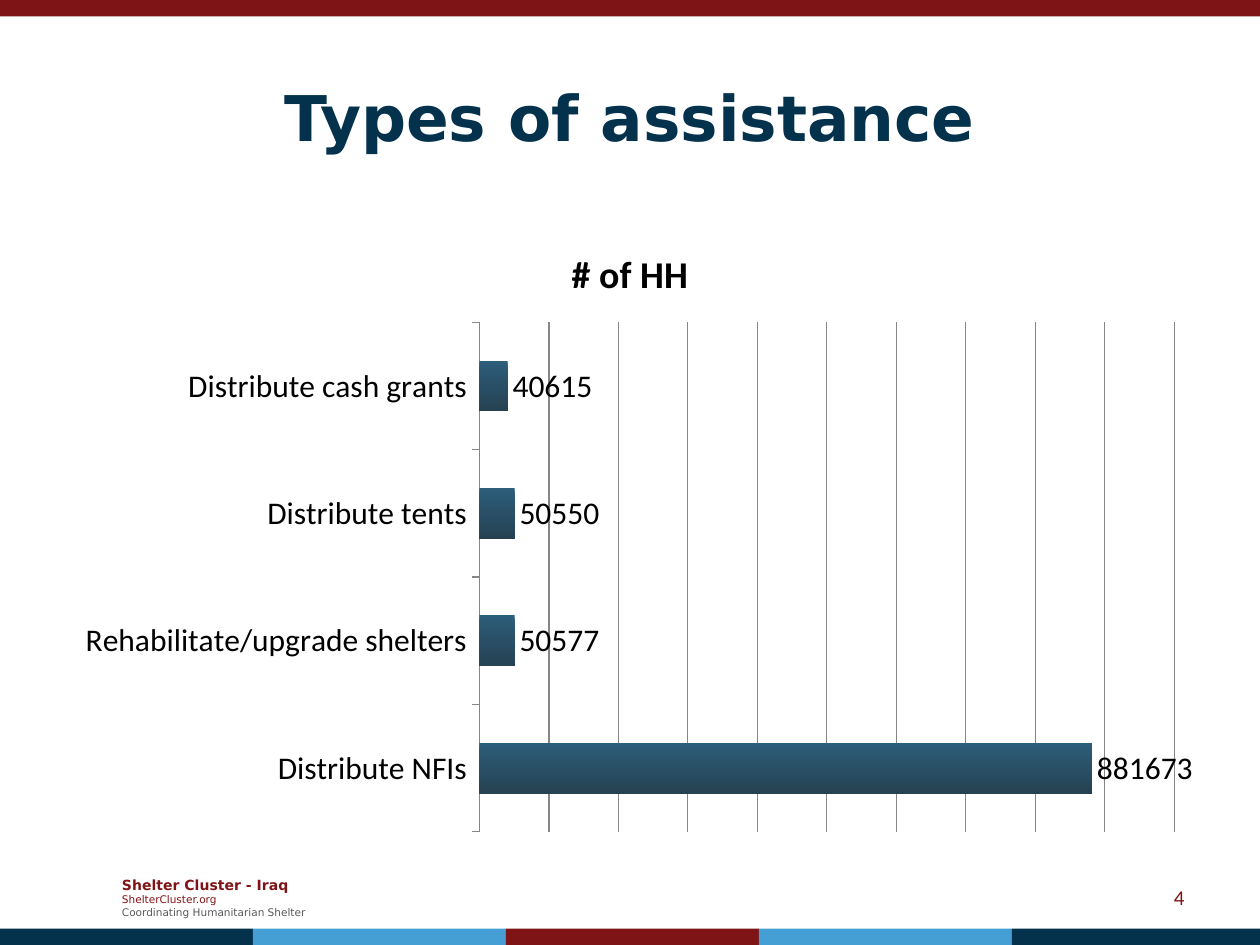
"""Build the slide on types of shelter assistance."""
from pptx import Presentation
from pptx.chart.data import CategoryChartData
from pptx.dml.color import RGBColor
from pptx.enum.chart import XL_CHART_TYPE as ChartType
from pptx.enum.chart import XL_LABEL_POSITION as LabelPosition
from pptx.enum.chart import XL_TICK_LABEL_POSITION as TickLabels
from pptx.enum.chart import XL_TICK_MARK as TickMark
from pptx.enum.shapes import MSO_SHAPE as Shape
from pptx.enum.text import MSO_ANCHOR as Anchor
from pptx.enum.text import PP_ALIGN as Align
from pptx.util import Cm, Pt

RED = RGBColor(0x7F, 0x14, 0x16)
NAVY = RGBColor(0x04, 0x31, 0x4C)
SKY = RGBColor(0x45, 0x9F, 0xD5)
GREY = RGBColor(0x59, 0x59, 0x59)
LINE = RGBColor(0x86, 0x86, 0x86)
BLACK = RGBColor(0, 0, 0)
BAR_TOP = RGBColor(0x2C, 0x5D, 0x7A)
BAR_BOTTOM = RGBColor(0x26, 0x42, 0x52)

HEADING_FONT = "DejaVu Sans"
BODY_FONT = "Calibri"
PAGE_WIDTH, PAGE_HEIGHT = 25.4, 19.05
BAND_HEIGHT, BAND_WIDTH = 0.33, 5.1


class SlideBuilder:
    def __init__(self, page):
        self.page = page

    def style(self, font, size, color, bold=False, name=BODY_FONT):
        font.name = name
        font.size = Pt(size)
        font.bold = bold
        font.color.rgb = color

    def band(self, left, top, width, color):
        band = self.page.shapes.add_shape(
            Shape.RECTANGLE, Cm(left), Cm(top), Cm(width), Cm(BAND_HEIGHT))
        band.shadow.inherit = False
        band.fill.solid()
        band.fill.fore_color.rgb = color
        band.line.fill.background()

    def text(self, place, lines, align=Align.LEFT, name=HEADING_FONT):
        box = self.page.shapes.add_textbox(*map(Cm, place))
        frame = box.text_frame
        frame.word_wrap = True
        frame.vertical_anchor = Anchor.MIDDLE
        for index, (words, size, color, bold) in enumerate(lines):
            para = frame.add_paragraph() if index else frame.paragraphs[0]
            para.text = words
            para.alignment = align
            self.style(para.font, size, color, bold, name)

    def bar_chart(self, place, title, values, top, step):
        data = CategoryChartData()
        data.categories = list(values)
        data.add_series(title, list(values.values()))
        chart = self.page.shapes.add_chart(
            ChartType.BAR_CLUSTERED, *map(Cm, place), data).chart
        self.style(chart.font, 18, BLACK)
        chart.has_legend = False
        chart.has_title = True
        heading = chart.chart_title.text_frame.paragraphs[0]
        heading.text = title
        self.style(heading.font, 21.6, BLACK, True)

        plot = chart.plots[0]
        plot.gap_width = 150
        plot.vary_by_categories = False
        plot.has_data_labels = True
        labels = plot.data_labels
        labels.show_value = True
        labels.position = LabelPosition.OUTSIDE_END
        self.style(labels.font, 18, BLACK)

        fill = plot.series[0].format.fill
        fill.gradient()
        fill.gradient_angle = 270
        for stop, color in zip(fill.gradient_stops, (BAR_TOP, BAR_BOTTOM)):
            stop.color.rgb = color

        categories = chart.category_axis
        categories.major_tick_mark = TickMark.OUTSIDE
        categories.format.line.color.rgb = LINE
        scale = chart.value_axis
        scale.minimum_scale, scale.maximum_scale = 0, top
        scale.major_unit = step
        scale.visible = False
        scale.tick_label_position = TickLabels.NONE
        scale.has_major_gridlines = True
        scale.major_gridlines.format.line.color.rgb = LINE


def main():
    deck = Presentation()
    deck.slide_width, deck.slide_height = Cm(PAGE_WIDTH), Cm(PAGE_HEIGHT)
    builder = SlideBuilder(deck.slides.add_slide(deck.slide_layouts[6]))

    builder.text((2.21, 17.53, 4.6, 1.12), [
        ("Shelter Cluster - Iraq", 8, RED, True),
        ("ShelterCluster.org", 6, RED, False),
        ("Coordinating Humanitarian Shelter", 6, GREY, False),
    ])
    builder.band(0, 0, PAGE_WIDTH, RED)
    for index, color in enumerate((NAVY, SKY, RED, SKY, NAVY)):
        left = index * BAND_WIDTH
        builder.band(left, PAGE_HEIGHT - BAND_HEIGHT,
                     min(BAND_WIDTH, PAGE_WIDTH - left), color)

    builder.text((1.27, 0.76, 22.86, 3.18),
                 [("Types of assistance", 36, NAVY, True)], Align.CENTER)
    households = {
        "Distribute NFIs": 881673,
        "Rehabilitate/upgrade shelters": 50577,
        "Distribute tents": 50550,
        "Distribute cash grants": 40615,
    }
    builder.bar_chart((1.27, 4.45, 22.86, 12.57), "# of HH", households,
                      1000000, 100000)
    builder.text((18.2, 17.58, 5.93, 1.02), [("4", 12, RED, False)],
                 Align.RIGHT, BODY_FONT)
    deck.save("out.pptx")


if __name__ == "__main__":
    main()
